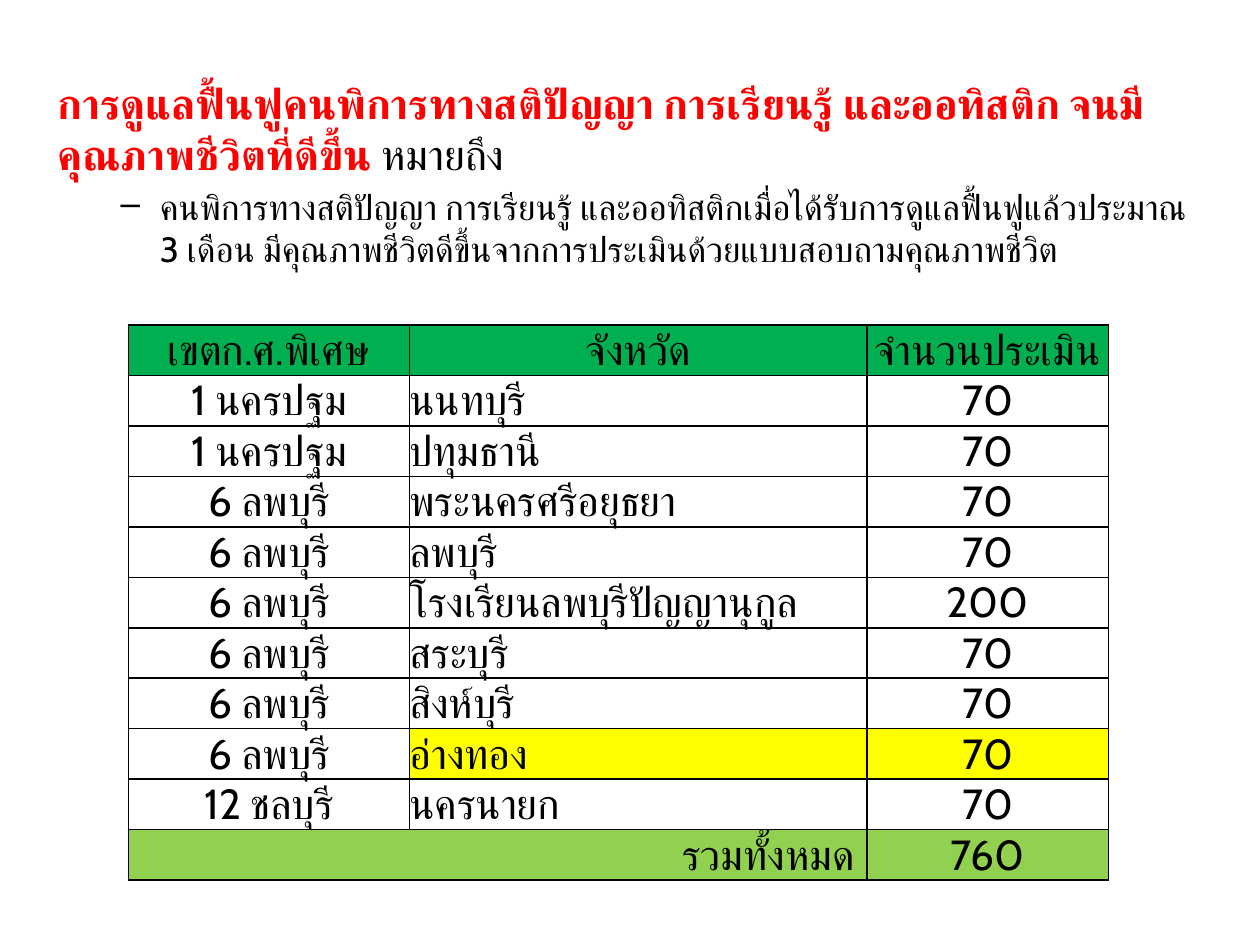
import pptx
import pptx.util
import pptx.dml.color
import pptx.enum.text
import pptx.oxml.ns
from lxml import etree

Inches = pptx.util.Inches
Pt = pptx.util.Pt
RGBColor = pptx.dml.color.RGBColor
ALIGN = pptx.enum.text.PP_ALIGN
qn = pptx.oxml.ns.qn

BLACK = RGBColor(0x00, 0x00, 0x00)
RED = RGBColor(0xFF, 0x00, 0x00)
GREEN = RGBColor(0x00, 0xB0, 0x50)
LIME = RGBColor(0x92, 0xD0, 0x50)
YELLOW = RGBColor(0xFF, 0xFF, 0x00)
FACE = "Cabin"

TITLE = "การดูแลฟื้นฟูคนพิการทางสติปัญญา การเรียนรู้ และออทิสติก จนมีคุณภาพชีวิตที่ดีขึ้น "
MEANS = "หมายถึง"
DETAIL = ("คนพิการทางสติปัญญา การเรียนรู้ และออทิสติกเมื่อได้รับการดูแลฟื้นฟูแล้วประมาณ 3 เดือน "
          "มีคุณภาพชีวิตดีขึ้นจากการประเมินด้วยแบบสอบถามคุณภาพชีวิต")
HEAD = ("เขตก.ศ.พิเศษ", "จังหวัด", "จำนวนประเมิน")
ROWS = [
    ("1 นครปฐม", "นนทบุรี", 70),
    ("1 นครปฐม", "ปทุมธานี", 70),
    ("6 ลพบุรี", "พระนครศรีอยุธยา", 70),
    ("6 ลพบุรี", "ลพบุรี", 70),
    ("6 ลพบุรี", "โรงเรียนลพบุรีปัญญานุกูล", 200),
    ("6 ลพบุรี", "สระบุรี", 70),
    ("6 ลพบุรี", "สิงห์บุรี", 70),
    ("6 ลพบุรี", "อ่างทอง", 70),
    ("12 ชลบุรี", "นครนายก", 70),
]
MARKED = "อ่างทอง"
TOTAL = ("รวมทั้งหมด", "", sum(row[2] for row in ROWS))
WIDTHS = (2.23, 3.63, 1.92)
HEIGHT = 0.4


def put(item, **values):
    for name, value in values.items():
        setattr(item, name, value)


def add_run(para, text, size=24, color=BLACK, bold=False):
    run = para.add_run()
    run.text = text
    put(run.font, size=Pt(size), name=FACE, bold=bold)
    run.font.color.rgb = color
    # Thai letters use the complex script face
    etree.SubElement(run.font._element, qn("a:cs"), typeface=FACE)


def add_dash(para, left, indent):
    props = para._p.get_or_add_pPr()
    props.set("marL", str(Inches(left)))
    props.set("indent", str(Inches(indent)))
    etree.SubElement(props, qn("a:buChar"), char="–")


def add_body(slide):
    box = slide.shapes.add_textbox(Inches(0.36), Inches(0.57), Inches(9.28), Inches(1.7))
    frame = box.text_frame
    frame.word_wrap = True
    lead = frame.paragraphs[0]
    lead.space_before = Pt(4.8)
    add_run(lead, TITLE, color=RED, bold=True)
    add_run(lead, MEANS)
    item = frame.add_paragraph()
    item.space_before = Pt(4)
    add_dash(item, 0.81, -0.31)
    add_run(item, DETAIL, size=20)


def add_edges(cell):
    props = cell._tc.get_or_add_tcPr()
    for spot, side in enumerate(("lnL", "lnR", "lnT", "lnB")):
        line = etree.Element(qn("a:" + side), w=str(Pt(1)))
        fill = etree.SubElement(line, qn("a:solidFill"))
        etree.SubElement(fill, qn("a:srgbClr"), val=str(BLACK))
        props.insert(spot, line)


def fill_cell(cell, text, align, color):
    put(cell, margin_left=0, margin_right=0, margin_top=0, margin_bottom=0,
        vertical_anchor=pptx.enum.text.MSO_ANCHOR.BOTTOM)
    if color is None:
        cell.fill.background()
    else:
        cell.fill.solid()
        cell.fill.fore_color.rgb = color
    add_edges(cell)
    if text:
        para = cell.text_frame.paragraphs[0]
        para.alignment = align
        add_run(para, text)


def get_style(row, col, data):
    """Return the alignment and fill of one cell."""
    if data is HEAD:
        return ALIGN.CENTER, GREEN
    if data is TOTAL:
        return (ALIGN.CENTER if col == 2 else ALIGN.RIGHT), LIME
    color = YELLOW if col > 0 and data[1] == MARKED else None
    return (ALIGN.LEFT if col == 1 else ALIGN.CENTER), color


def add_grid(slide):
    lines = [HEAD, *ROWS, TOTAL]
    shape = slide.shapes.add_table(len(lines), len(WIDTHS), Inches(1.02), Inches(2.58),
                                   Inches(sum(WIDTHS)), Inches(HEIGHT * len(lines)))
    table = shape.table
    put(table, first_row=False, horz_banding=False)
    for col, width in zip(table.columns, WIDTHS):
        col.width = Inches(width)
    for row, data in enumerate(lines):
        table.rows[row].height = Inches(HEIGHT)
        for col, value in enumerate(data):
            fill_cell(table.cell(row, col), str(value), *get_style(row, col, data))

    # Total label spans the first two columns
    last = len(lines) - 1
    label = table.cell(last, 0)
    label.merge(table.cell(last, 1))
    label.margin_right = Inches(0.1)


def main():
    deck = pptx.Presentation()
    put(deck, slide_width=Inches(10), slide_height=Inches(7.5))
    slide = deck.slides.add_slide(deck.slide_layouts[6])
    add_body(slide)
    add_grid(slide)
    deck.save("out.pptx")


if __name__ == "__main__":
    main()
